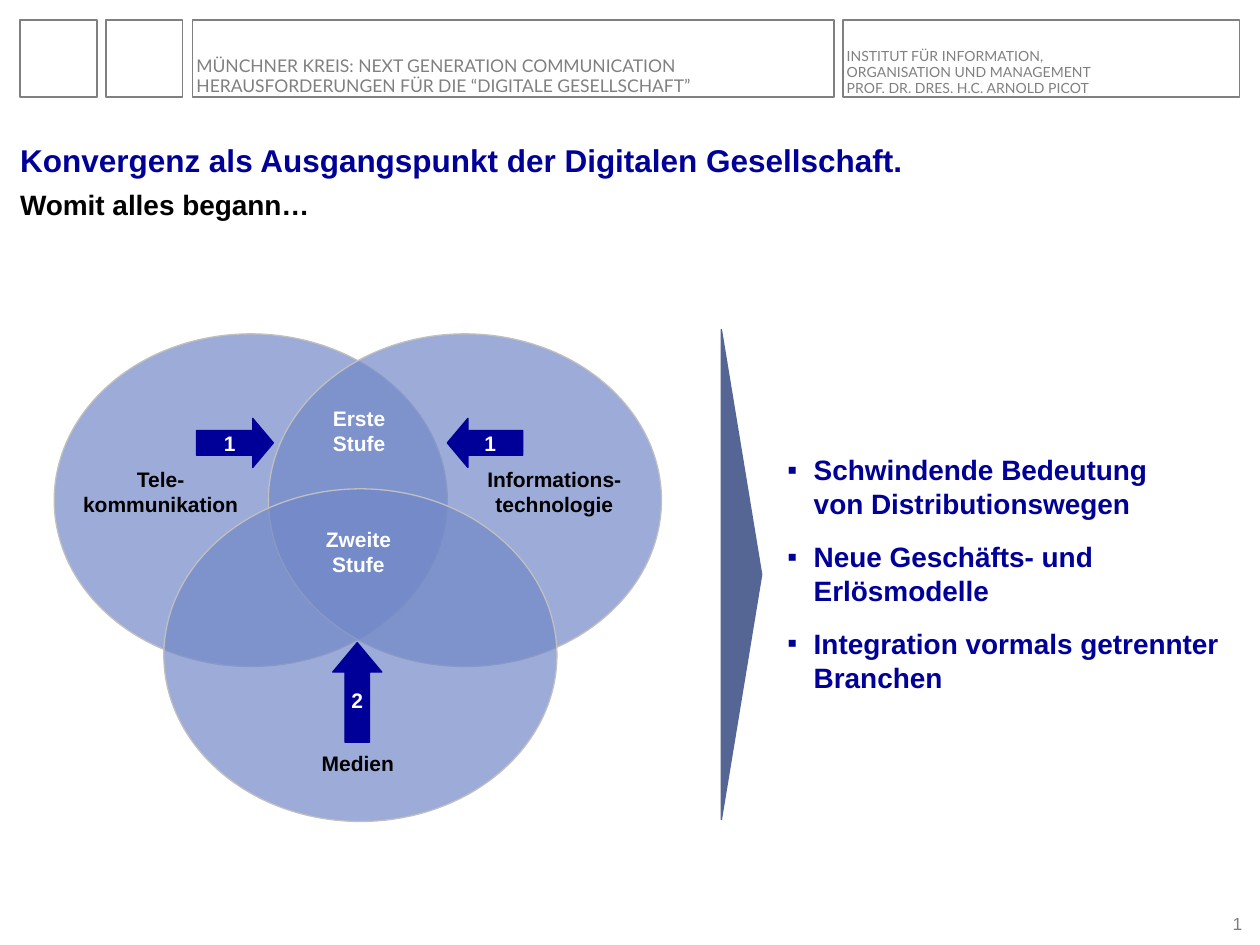
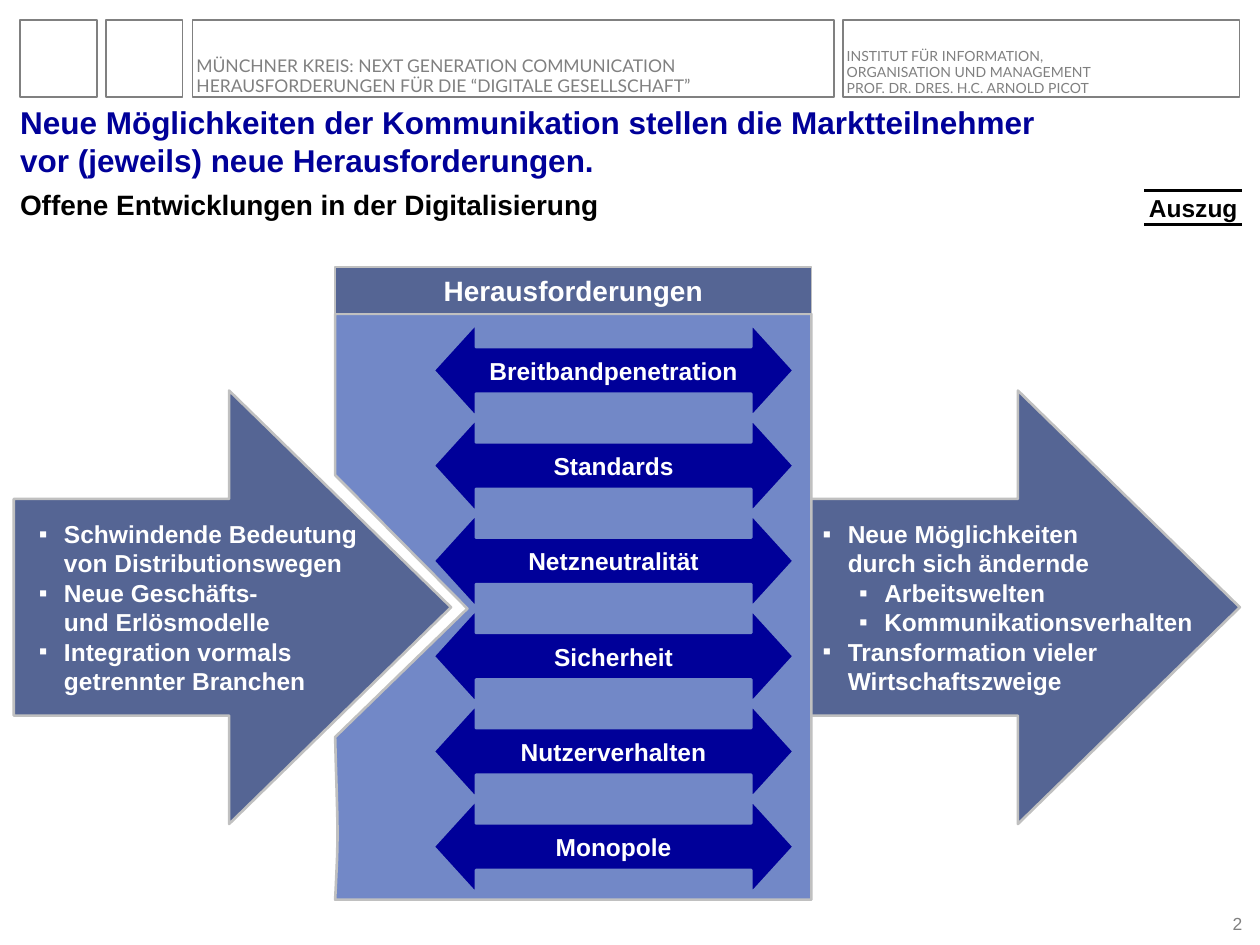
from copy import deepcopy

from lxml.etree import SubElement
from pptx import Presentation
from pptx.dml.color import RGBColor
from pptx.enum.shapes import MSO_CONNECTOR, MSO_SHAPE as Shape
from pptx.enum.text import MSO_ANCHOR as Anchor, PP_ALIGN as Align
from pptx.oxml.ns import qn
from pptx.util import Inches, Pt

COLORS = {
    "navy": "000099", "slate": "556594", "blue": "7288C7",
    "silver": "C0C0C0", "gray": "808080", "black": "000000", "white": "FFFFFF",
}

HEADER_TOP, HEADER_HEIGHT = 0.16, 0.61
HEADER_FRAMES = [(0.16, 0.61), (0.84, 0.61), (1.53, 5.09), (6.69, 3.15)]  # left, width
HEADER_TEXTS = [
    ("MÜNCHNER KREIS: NEXT GENERATION COMMUNICATION\n"
     "HERAUSFORDERUNGEN FÜR DIE “DIGITALE GESELLSCHAFT”", (1.56, 0.36, 5.06, 0.41), 10),
    ("INSTITUT FÜR INFORMATION,\nORGANISATION UND MANAGEMENT\n"
     "PROF. DR. DRES. H.C. ARNOLD PICOT", (6.72, 0.31, 2.6, 0.46), 8),
]

CIRCLE_SIZE = (3.12, 2.64)
CIRCLES = [(0.43, 2.65), (2.13, 2.65), (1.3, 3.88)]
CIRCLE_LABELS = [
    ("Tele-\nkommunikation", (0.55, 3.65, 1.45, 0.5), "black"),
    ("Informations-\ntechnologie", (3.76, 3.65, 1.28, 0.5), "black"),
    ("Medien", (2.45, 5.91, 0.78, 0.3), "black"),
    ("Erste\nStufe", (2.54, 3.17, 0.62, 0.5), "white"),
    ("Zweite\nStufe", (1.93, 4.13, 1.83, 0.5), "white"),
]
STAGE_ARROWS = [
    ("1", Shape.RIGHT_ARROW, (1.56, 3.32, 0.61, 0.39), 0.42),
    ("1", Shape.LEFT_ARROW, (3.55, 3.32, 0.6, 0.39), 0.42),
    ("2", Shape.UP_ARROW, (2.64, 5.1, 0.39, 0.79), 0.6),
]
CONSEQUENCES = [
    "Schwindende Bedeutung\nvon Distributionswegen",
    "Neue Geschäfts- und Erlösmodelle",
    "Integration vormals getrennter Branchen",
]

CHALLENGES = ["Breitbandpenetration", "Standards", "Netzneutralität",
              "Sicherheit", "Nutzerverhalten", "Monopole"]
CHALLENGE_TOP, CHALLENGE_PITCH = 2.57, 0.756
BIG_ARROWS = [  # box, then (text, indent) of each bullet
    ((6.04, 3.1, 3.8, 3.44), [
        ("Neue Möglichkeiten\ndurch sich ändernde", 0.59),
        ("Arbeitswelten", 0.88),
        ("Kommunikationsverhalten", 0.88),
        ("Transformation vieler\nWirtschaftszweige", 0.59)]),
    ((0.11, 3.1, 3.47, 3.44), [
        ("Schwindende Bedeutung\nvon Distributionswegen", 0.3),
        ("Neue Geschäfts-\nund Erlösmodelle", 0.3),
        ("Integration vormals\ngetrennter Branchen", 0.3)]),
]
PANEL_LEFT, PANEL_TOP, PANEL_RIGHT, PANEL_BOTTOM = 2.66, 2.49, 6.44, 7.14
NOTCH = [(PANEL_LEFT, 3.77), (3.71, 4.83)]
LEFT_EDGE_CURVE = [(2.66, 5.85), (2.68, 6.62), (2.69, 6.57), (2.66, 7.14)]


def color(name):
    return RGBColor.from_string(COLORS[name])


def inches(values):
    return [Inches(value) for value in values]


def set_bullet(paragraph, indent, hanging):
    properties = paragraph._p.get_or_add_pPr()
    properties.set("marL", str(Inches(indent)))
    properties.set("indent", str(-Inches(hanging)))
    SubElement(properties, qn("a:buFont")).set("typeface", "Arial")
    SubElement(properties, qn("a:buChar")).set("char", "▪")


def write(shape, paragraphs, *, size, ink="black", bold=True, font="Arial", align=Align.LEFT,
          anchor=Anchor.TOP, wrap=False, inset=None, indents=None, hanging=0.2,
          line_spacing=None, before=0, after=0):
    """Fill a shape with text; indents, one for each paragraph, turn on bullets."""
    frame = shape.text_frame
    frame.word_wrap, frame.vertical_anchor = wrap, anchor
    if inset is not None:
        frame.margin_left = frame.margin_right = Inches(inset)
        frame.margin_top = frame.margin_bottom = Inches(inset)
    for index, text in enumerate(paragraphs):
        paragraph = frame.add_paragraph() if index else frame.paragraphs[0]
        paragraph.text = text.replace("\n", "\v")
        paragraph.alignment = align
        if line_spacing:
            paragraph.line_spacing = line_spacing
        paragraph.space_before = Pt(before if index else 0)
        paragraph.space_after = Pt(after)
        if indents:
            set_bullet(paragraph, indents[index], hanging)
        for run in paragraph.runs:
            run.font.size, run.font.bold, run.font.name = Pt(size), bold, font
            run.font.color.rgb = color(ink)
        for line_break in paragraph._p.findall(qn("a:br")):
            line_break.insert(0, deepcopy(paragraph.runs[0]._r.rPr))


def add_text(slide, text, box, **text_format):
    write(slide.shapes.add_textbox(*inches(box)), [text], **text_format)


def style(shape, fill=None, line="silver", width=0.75):
    shape.shadow.inherit = False
    if fill:
        shape.fill.solid()
        shape.fill.fore_color.rgb = color(fill)
    else:
        shape.fill.background()
    shape.line.color.rgb = color(line)
    shape.line.width = Pt(width)
    return shape


def add_shape(slide, kind, box, adjustments=(), **look):
    shape = slide.shapes.add_shape(kind, *inches(box))
    for index, value in enumerate(adjustments):
        shape.adjustments[index] = value
    return style(shape, **look)


def add_rule(slide, left, right, y):
    rule = slide.shapes.add_connector(MSO_CONNECTOR.STRAIGHT, *inches((left, y, right, y)))
    rule.line.color.rgb = color("black")
    rule.line.width = Pt(1.5)
    SubElement(rule._element.spPr, qn("a:effectLst"))


def set_opacity(shape, percent):
    fill_color = shape._element.spPr.find(qn("a:solidFill"))[0]
    SubElement(fill_color, qn("a:alpha")).set("val", str(percent * 1000))


def curve_points(start, control1, control2, end, steps=16):
    """Points along a cubic curve, both ends included."""
    points = []
    for step in range(steps + 1):
        t = step / steps
        weights = ((1 - t) ** 3, 3 * t * (1 - t) ** 2, 3 * t * t * (1 - t), t ** 3)
        knots = list(zip(weights, (start, control1, control2, end)))
        points.append(tuple(sum(w * knot[axis] for w, knot in knots) for axis in (0, 1)))
    return points


def add_base_slide(presentation, title, subtitle):
    slide = presentation.slides.add_slide(presentation.slide_layouts[6])
    for left, width in HEADER_FRAMES:
        add_shape(slide, Shape.RECTANGLE, (left, HEADER_TOP, width, HEADER_HEIGHT), line="gray")
    for text, box, size in HEADER_TEXTS:
        add_text(slide, text, box, size=size, ink="gray", bold=False, font="Lato",
                 anchor=Anchor.BOTTOM, wrap=True, inset=0, line_spacing=0.95)
    add_text(slide, title, (0.16, 0.84, 9.68, 0.58), size=18, ink="navy",
             anchor=Anchor.BOTTOM, wrap=True, inset=0)
    add_text(slide, subtitle, (0.16, 1.49, 7.64, 0.27), size=16, wrap=True, inset=0)
    add_text(slide, str(len(presentation.slides)), (9.58, 7.24, 0.28, 0.17), size=10,
             ink="gray", bold=False, align=Align.RIGHT, anchor=Anchor.BOTTOM, inset=0)
    return slide


def build_convergence(presentation):
    slide = add_base_slide(presentation,
                           "Konvergenz als Ausgangspunkt der Digitalen Gesellschaft.",
                           "Womit alles begann…")
    for position in CIRCLES:
        set_opacity(add_shape(slide, Shape.OVAL, position + CIRCLE_SIZE, fill="blue"), 70)
    for text, box, ink in CIRCLE_LABELS:
        add_text(slide, text, box, size=12, ink=ink, align=Align.CENTER, wrap=True, inset=0.05)
    for text, kind, box, head in STAGE_ARROWS:
        arrow = add_shape(slide, kind, box, (0.5, head), fill="navy", line="navy")
        write(arrow, [text], size=12, ink="white", align=Align.CENTER, anchor=Anchor.MIDDLE)
    pointer = add_shape(slide, Shape.FLOWCHART_MERGE, (3.94, 4.4, 3.89, 0.32),
                        fill="slate", line="slate")
    pointer.rotation = 270
    write(slide.shapes.add_textbox(*inches((6.15, 3.86, 3.65, 1.38))), CONSEQUENCES,
          size=16, ink="navy", anchor=Anchor.MIDDLE, wrap=True,
          indents=[0.21] * len(CONSEQUENCES), hanging=0.21, before=8, after=3.2)


def add_challenge_panel(slide):
    outline = [*NOTCH, *curve_points(*LEFT_EDGE_CURVE),
               (PANEL_RIGHT, PANEL_BOTTOM), (PANEL_RIGHT, PANEL_TOP)]
    builder = slide.shapes.build_freeform(Inches(PANEL_LEFT), Inches(PANEL_TOP))
    builder.add_line_segments([inches(point) for point in outline], close=True)
    style(builder.convert_to_shape(), fill="blue", width=1.5)

    heading = add_shape(slide, Shape.RECTANGLE,
                        (PANEL_LEFT, 2.12, PANEL_RIGHT - PANEL_LEFT, 0.37), fill="slate")
    write(heading, ["Herausforderungen"], size=16, ink="white", align=Align.CENTER,
          anchor=Anchor.MIDDLE, inset=0.04)
    for row, challenge in enumerate(CHALLENGES):
        arrow = add_shape(slide, Shape.LEFT_RIGHT_ARROW,
                          (3.44, CHALLENGE_TOP + row * CHALLENGE_PITCH, 2.86, 0.74),
                          (0.5, 0.455), fill="navy", line="blue", width=1.5)
        write(arrow, [challenge], size=14, ink="white", align=Align.CENTER,
              anchor=Anchor.MIDDLE)


def add_big_arrow(slide, box, bullets):
    arrow = add_shape(slide, Shape.RIGHT_ARROW, box, (0.5, 0.512), fill="slate", width=1.5)
    texts, indents = zip(*bullets)
    write(arrow, texts, size=14, ink="white", anchor=Anchor.MIDDLE, indents=indents)


def build_challenges(presentation):
    slide = add_base_slide(
        presentation,
        "Neue Möglichkeiten der Kommunikation stellen die Marktteilnehmer\n"
        "vor (jeweils) neue Herausforderungen.",
        "Offene Entwicklungen in der Digitalisierung")
    outcome_arrow, cause_arrow = BIG_ARROWS
    add_big_arrow(slide, *outcome_arrow)
    add_challenge_panel(slide)
    add_big_arrow(slide, *cause_arrow)
    add_text(slide, "Auszug", (9.02, 1.48, 0.91, 0.34), size=14)
    for y in (1.51, 1.78):
        add_rule(slide, 9.08, 9.86, y)


def main():
    presentation = Presentation()
    presentation.slide_width, presentation.slide_height = Inches(10), Inches(7.5)
    build_convergence(presentation)
    build_challenges(presentation)
    presentation.save("out.pptx")


if __name__ == "__main__":
    main()
